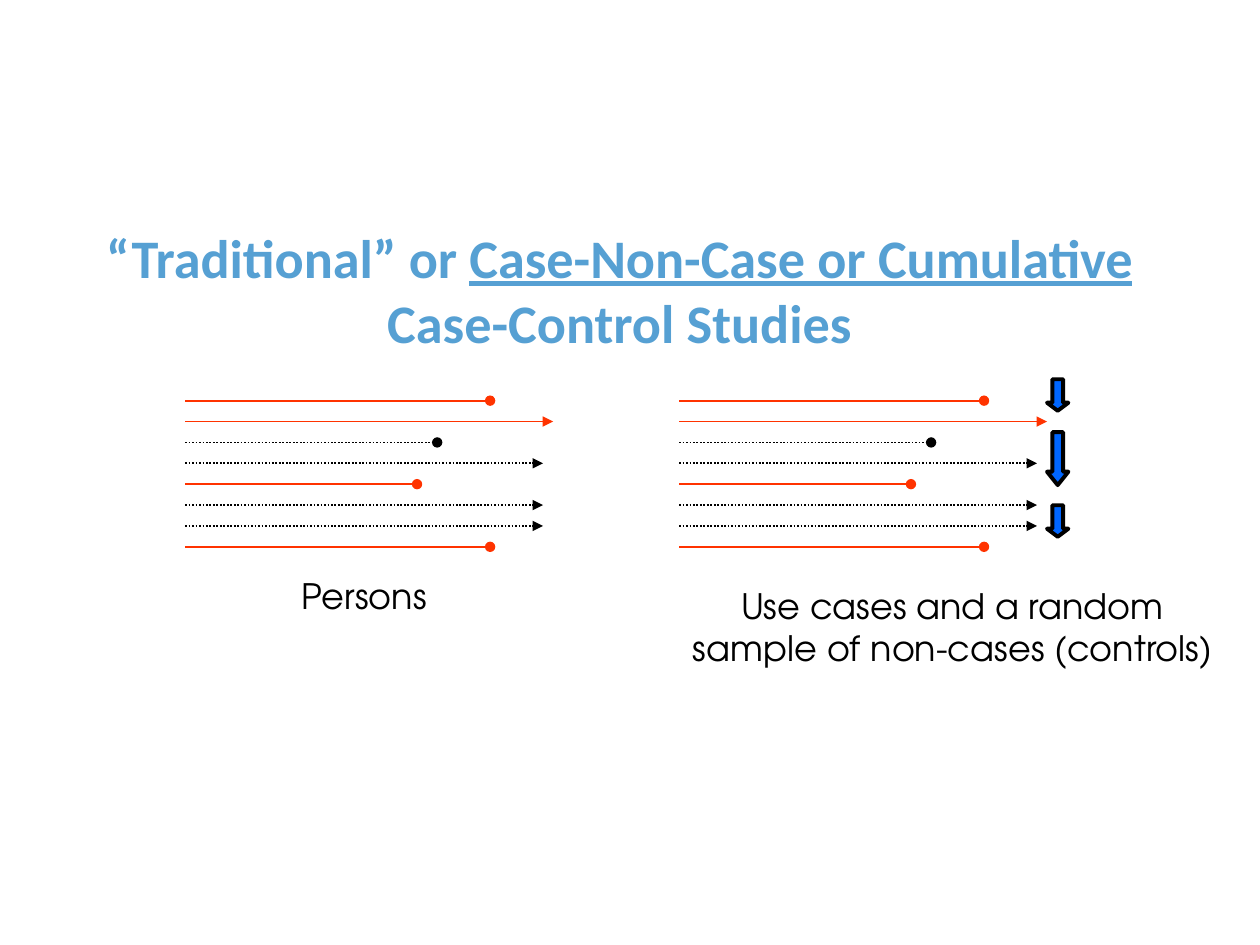
from lxml import etree
from pptx import Presentation
from pptx.dml.color import RGBColor
from pptx.enum.dml import MSO_LINE
from pptx.enum.shapes import MSO_CONNECTOR, MSO_SHAPE
from pptx.enum.text import MSO_ANCHOR, MSO_AUTO_SIZE, PP_ALIGN
from pptx.oxml.ns import qn
from pptx.util import Inches, Pt

COLORS = {
    name: RGBColor.from_string(value)
    for name, value in {
        "title": "56A0D3",
        "case": "FF3300",
        "noncase": "000000",
        "text": "000000",
        "arrow": "0066FF",
    }.items()
}

prs = Presentation()
prs.slide_width, prs.slide_height = Inches(10), Inches(7.5)
slide = prs.slides.add_slide(prs.slide_layouts[5])

# Title
title = slide.shapes.title
title.left, title.top = Inches(-0.17), Inches(1.62)
title.width, title.height = Inches(10.17), Inches(1.35)
heading = title.text_frame
heading.auto_size = MSO_AUTO_SIZE.NONE
heading.vertical_anchor = MSO_ANCHOR.MIDDLE
heading_line = heading.paragraphs[0]
heading_line.alignment = PP_ALIGN.CENTER
for words, underlined in [
    ("“Traditional” or ", False),
    ("Case-Non-Case or Cumulative", True),
    ("Case-Control Studies", False),
]:
    if words == "Case-Control Studies":
        heading_line.add_line_break()
    run = heading_line.add_run()
    run.text = words
    run.font.name, run.font.size = "Calibri", Pt(31)
    run.font.bold, run.font.underline = True, underlined
    run.font.color.rgb = COLORS["title"]

# Follow-up lines, top to bottom: group, length, end mark
persons = [
    ("case", 2.42, "oval"),
    ("case", 2.92, "triangle"),
    ("noncase", 2.0, "oval"),
    ("noncase", 2.84, "triangle"),
    ("case", 1.84, "oval"),
    ("noncase", 2.84, "triangle"),
    ("noncase", 2.84, "triangle"),
    ("case", 2.42, "oval"),
]
FIRST_Y, LAST_Y = 3.18, 4.34
row_gap = (LAST_Y - FIRST_Y) / (len(persons) - 1)
for start in (1.47, 5.39):
    for row, (group, length, end_mark) in enumerate(persons):
        y = Inches(FIRST_Y + row * row_gap)
        follow_up = slide.shapes.add_connector(
            MSO_CONNECTOR.STRAIGHT, Inches(start), y, Inches(start + length), y
        )
        follow_up.line.color.rgb = COLORS[group]
        follow_up.line.width = Pt(1)
        if group == "noncase":
            follow_up.line.dash_style = MSO_LINE.ROUND_DOT
        outline = follow_up.line._get_or_add_ln()
        etree.SubElement(outline, qn("a:tailEnd"), type=end_mark)
        etree.SubElement(follow_up._element.spPr, qn("a:effectLst"))

# Block arrows marking the sampled persons
for top, height, head in [(3.01, 0.25, 0.375), (3.43, 0.42, 0.625), (4.01, 0.25, 0.375)]:
    sample_arrow = slide.shapes.add_shape(
        MSO_SHAPE.DOWN_ARROW, Inches(8.31), Inches(top), Inches(0.17), Inches(height)
    )
    sample_arrow.adjustments[0], sample_arrow.adjustments[1] = 0.5, head
    sample_arrow.shadow.inherit = False
    sample_arrow.fill.solid()
    sample_arrow.fill.fore_color.rgb = COLORS["arrow"]
    sample_arrow.line.color.rgb = COLORS["noncase"]
    sample_arrow.line.width = Pt(2.25)

# Captions
for words, left, top, width, height in [
    ("Persons", 1.39, 4.51, 3, 0.43),
    ("Use cases and a random sample of non-cases (controls)", 5.31, 4.59, 4.5, 0.77),
]:
    caption = slide.shapes.add_textbox(
        Inches(left), Inches(top), Inches(width), Inches(height)
    ).text_frame
    caption.word_wrap = True
    caption.auto_size = MSO_AUTO_SIZE.SHAPE_TO_FIT_TEXT
    caption.paragraphs[0].alignment = PP_ALIGN.CENTER
    run = caption.paragraphs[0].add_run()
    run.text = words
    run.font.name, run.font.size = "TeX Gyre Adventor", Pt(20)
    run.font.color.rgb = COLORS["text"]

prs.save("out.pptx")
